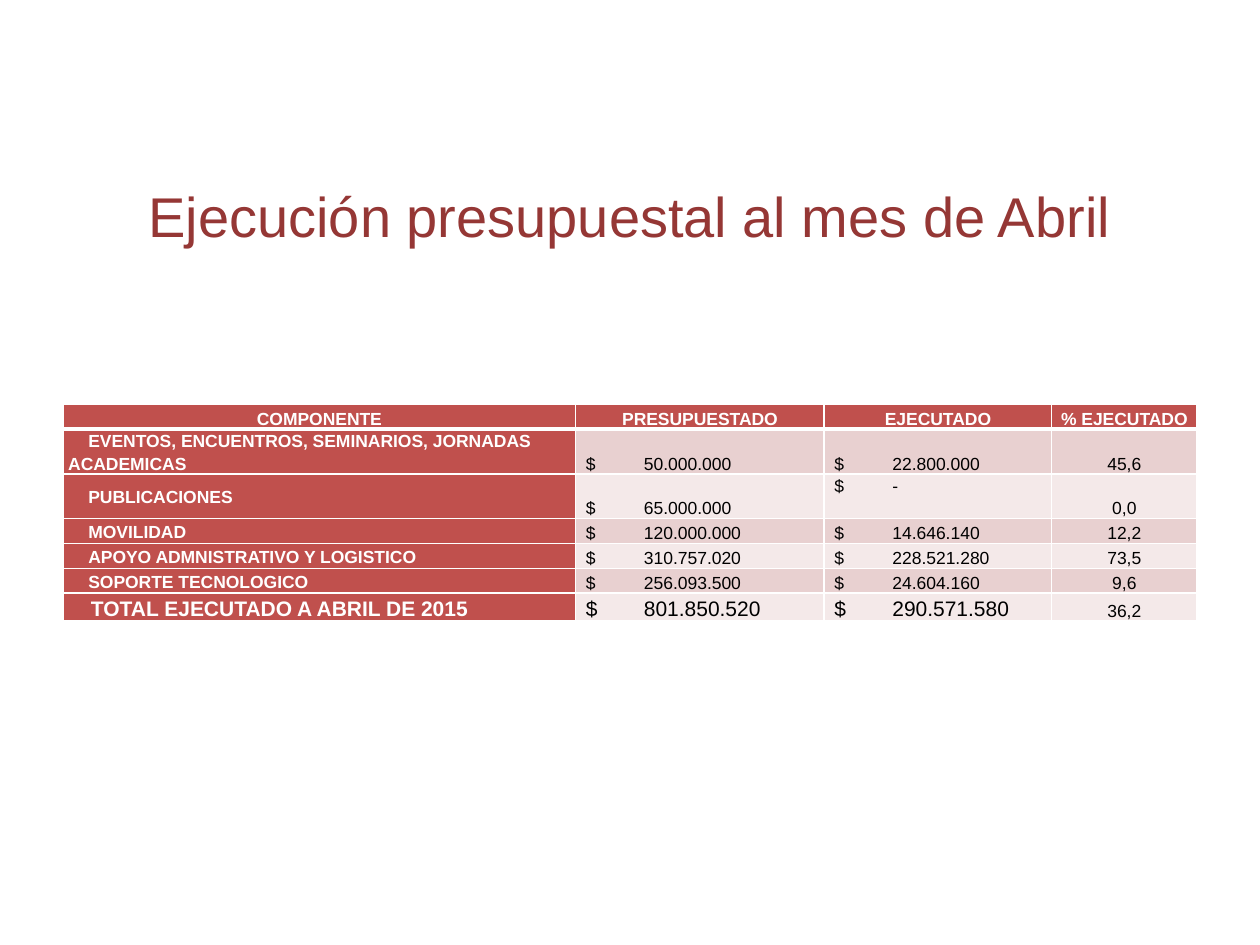
from lxml import etree
from pptx import Presentation
from pptx import util as u
from pptx.dml import color
from pptx.enum import text
from pptx.oxml import ns

RED, WHITE, BLACK = "C0504D", "FFFFFF", "000000"
BANDS = ["E8D0D0", "F4E9E9"]
HEADS = ["COMPONENTE", "PRESUPUESTADO", "EJECUTADO", "% EJECUTADO"]
ROWS = [
    ("EVENTOS, ENCUENTROS, SEMINARIOS, JORNADAS ACADEMICAS", "50.000.000", "22.800.000", "45,6"),
    ("PUBLICACIONES", "65.000.000", "-", "0,0"),
    ("MOVILIDAD", "120.000.000", "14.646.140", "12,2"),
    ("APOYO ADMNISTRATIVO Y LOGISTICO", "310.757.020", "228.521.280", "73,5"),
    ("SOPORTE TECNOLOGICO", "256.093.500", "24.604.160", "9,6"),
    ("TOTAL EJECUTADO A ABRIL DE 2015", "801.850.520", "290.571.580", "36,2"),
]
WIDTHS = [293, 142, 130, 83]
HEIGHTS = [14, 25.6, 25.6, 14.2, 14.2, 14.2, 16]
TABS = [132, 121]  # right edge of the amounts in each money column


def rgb(code):
    return color.RGBColor.from_string(code)


def sub(node, tag, **attrs):
    return etree.SubElement(node, ns.qn(tag), **attrs)


def write(frame, words, size=10, ink=BLACK, bold=False, align="LEFT",
          space=None, indent=0, tab=None):
    para = frame.paragraphs[0]
    props = para._p.get_or_add_pPr()
    if indent:
        props.set("indent", str(u.Pt(indent)))
    if tab:
        sub(sub(props, "a:tabLst"), "a:tab", pos=str(u.Pt(tab)), algn="r")
    para.alignment = getattr(text.PP_ALIGN, align)
    if space:
        para.line_spacing = space
    run = para.add_run()
    run.text = words
    font = run.font
    font.name, font.size, font.bold = "Arial", u.Pt(size), bold
    font.color.rgb = rgb(ink)


class Deck:
    def __init__(self):
        self.prs = Presentation()
        self.prs.slide_width, self.prs.slide_height = u.Pt(720), u.Pt(540)
        self.slide = self.prs.slides.add_slide(self.prs.slide_layouts[5])

    def title(self, words, left, top, width, height):
        box = self.slide.shapes.title
        box.left, box.top = u.Pt(left), u.Pt(top)
        box.width, box.height = u.Pt(width), u.Pt(height)
        box.text_frame.vertical_anchor = text.MSO_ANCHOR.MIDDLE
        write(box.text_frame, words, size=32, ink="953735", align="CENTER")

    def table(self, left, top, widths, heights):
        grid = self.slide.shapes.add_table(
            len(heights), len(widths), u.Pt(left), u.Pt(top),
            u.Pt(sum(widths)), u.Pt(sum(heights))).table
        for col, width in zip(grid.columns, widths):
            col.width = u.Pt(width)
        for row, height in zip(grid.rows, heights):
            row.height = u.Pt(height)
        return grid

    def cell(self, cell, words, fill, anchor="BOTTOM", top=1, base=1, **style):
        """Fill one cell; top and base are its border widths."""
        cell.margin_left = cell.margin_right = u.Pt(3)
        cell.margin_top = cell.margin_bottom = 0
        cell.vertical_anchor = getattr(text.MSO_ANCHOR, anchor)
        props = cell._tc.get_or_add_tcPr()
        for side, width in zip("LRTB", (1, 1, top, base)):
            line = sub(props, "a:ln" + side, w=str(u.Pt(width)))
            sub(sub(line, "a:solidFill"), "a:srgbClr", val=WHITE)
        cell.fill.solid()
        cell.fill.fore_color.rgb = rgb(fill)
        write(cell.text_frame, words, space=1.15, **style)


def main():
    deck = Deck()
    deck.title("Ejecución presupuestal al mes de Abril", 36, 77.75, 648, 90)
    grid = deck.table(36, 231.1, WIDTHS, HEIGHTS)
    for c, head in enumerate(HEADS):
        deck.cell(grid.cell(0, c), head, RED, base=3, ink=WHITE, bold=True, align="CENTER")
    for r, (name, *sums, share) in enumerate(ROWS, 1):
        band = BANDS[(r - 1) % 2]
        total = r == len(ROWS)
        size = 12 if total else 10
        top = 3 if r == 1 else 1
        deck.cell(grid.cell(r, 0), name, RED, "MIDDLE", top, size=size,
                  ink=WHITE, bold=True, indent=13 if total else 11.5)
        for c, (amount, tab) in enumerate(zip(sums, TABS), 1):
            short = c == 2 and (total or amount == "-")
            deck.cell(grid.cell(r, c), "$\t" + amount, band,
                      "TOP" if amount == "-" else "BOTTOM", top, size=size,
                      indent=2.8, tab=tab - 2 if short else tab)
        deck.cell(grid.cell(r, 3), share, band, top=top, align="CENTER")
    deck.prs.save("out.pptx")


if __name__ == "__main__":
    main()
